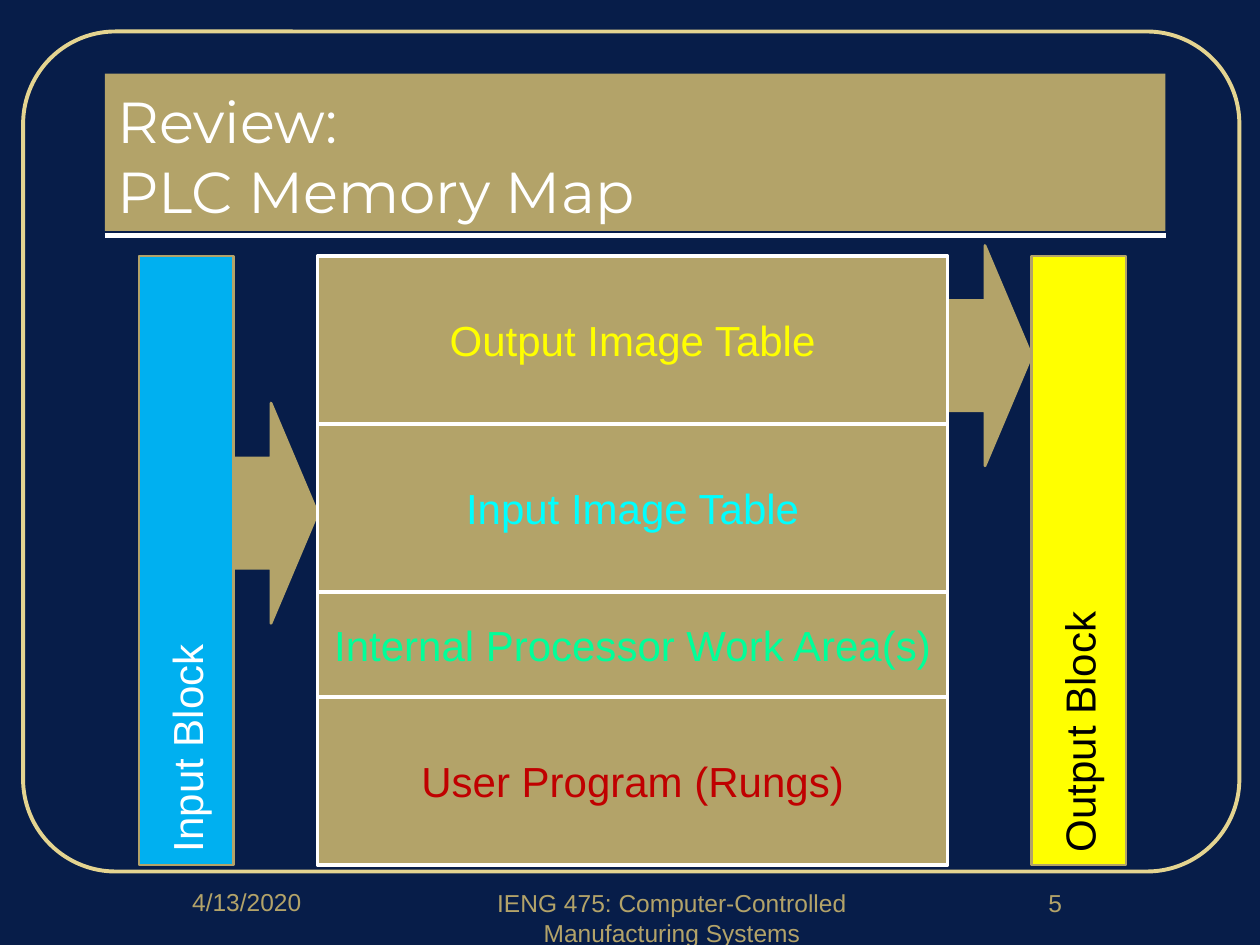
from lxml import etree
from pptx import Presentation
from pptx.dml.color import RGBColor
from pptx.enum.shapes import MSO_CONNECTOR, MSO_SHAPE
from pptx.enum.text import MSO_ANCHOR, PP_ALIGN
from pptx.oxml.ns import qn
from pptx.util import Pt

RECT, ROUNDED, ARROW = MSO_SHAPE.RECTANGLE, MSO_SHAPE.ROUNDED_RECTANGLE, MSO_SHAPE.RIGHT_ARROW
LEFT, CENTER = PP_ALIGN.LEFT, PP_ALIGN.CENTER
TOP, MIDDLE, BOTTOM = MSO_ANCHOR.TOP, MSO_ANCHOR.MIDDLE, MSO_ANCHOR.BOTTOM

NAVY, GOLD, CREAM, WHITE = "071D49", "B3A369", "E4D490", "FFFFFF"

# Content
TITLE = "Review:\vPLC Memory Map"
FOOTERS = [  # text, left, top, width
    ("4/13/2020", 60, 503.5, 162),
    ("IENG 475: Computer-Controlled Manufacturing Systems", 258, 504, 252),
    ("5", 540, 504, 126),
]
MEMORY_AREAS = [  # text, height, text colour
    ("Output Image Table", 96, "FFFF00"),
    ("Input Image Table", 96, "00FFFF"),
    ("Internal Processor Work Area(s)", 60, "00FF99"),
    ("User Program (Rungs)", 96, "C00000"),
]

# Layout
MAP_LEFT, MAP_TOP, MAP_WIDTH = 181.5, 146.25, 360
MAP_RIGHT = MAP_LEFT + MAP_WIDTH
MAP_HEIGHT = sum(height for _, height, _ in MEMORY_AREAS)
BLOCK_WIDTH, ARROW_WIDTH, ARROW_HEIGHT = 54, 48, 126
BLOCKS = [  # text, left, fill, text colour
    ("Input Block", MAP_LEFT - ARROW_WIDTH - BLOCK_WIDTH, "00B0F0", WHITE),
    ("Output Block", MAP_RIGHT + ARROW_WIDTH, "FFFF00", "000000"),
]
ARROWS = [(MAP_LEFT - ARROW_WIDTH, 230.25), (MAP_RIGHT, 140.25)]  # left, top


def color(value):
    return RGBColor.from_string(value)


def add_shape(page, kind, left, top, width, height, fill=None, line=None, weight=1.5):
    shape = page.shapes.add_shape(kind, Pt(left), Pt(top), Pt(width), Pt(height))
    shape.shadow.inherit = False
    if fill:
        shape.fill.solid()
        shape.fill.fore_color.rgb = color(fill)
    else:
        shape.fill.background()
    if line:
        shape.line.color.rgb = color(line)
        shape.line.width = Pt(weight)
    else:
        shape.line.fill.background()
    return shape


def write(shape, text, size, text_color, font="Arial", align=CENTER, anchor=MIDDLE, wrap=True):
    frame = shape.text_frame
    frame.word_wrap = wrap
    frame.vertical_anchor = anchor
    para = frame.paragraphs[0]
    para.text = text
    para.alignment = align
    para.font.size = Pt(size)
    para.font.name = font
    para.font.color.rgb = color(text_color)
    return frame


def main():
    deck = Presentation()
    deck.slide_width, deck.slide_height = Pt(720), Pt(540)
    page = deck.slides.add_slide(deck.slide_layouts[6])
    page.background.fill.solid()
    page.background.fill.fore_color.rgb = color(NAVY)

    # Frame and title rule
    border = add_shape(page, ROUNDED, 13.25, 18, 695, 480, line=CREAM, weight=2.25)
    border.adjustments[0] = 0.11
    rule = page.shapes.add_connector(MSO_CONNECTOR.STRAIGHT, Pt(60), Pt(134.5), Pt(666), Pt(134.5))
    rule.line.color.rgb = color(WHITE)
    rule.line.width = Pt(3)
    etree.SubElement(rule._element.spPr, qn("a:effectLst"))

    # Footers
    for text, left, top, width in FOOTERS:
        box = page.shapes.add_textbox(Pt(left), Pt(top), Pt(width), Pt(36))
        write(box, text, 14, GOLD, anchor=TOP)

    # Title
    banner = add_shape(page, RECT, 60, 42, 606, 90, fill=GOLD)
    write(banner, TITLE, 33, WHITE, "Montserrat", LEFT, BOTTOM)

    # Input and output blocks, read upwards
    for text, left, fill, text_color in BLOCKS:
        block = add_shape(page, RECT, left, MAP_TOP, BLOCK_WIDTH, MAP_HEIGHT, fill, GOLD)
        frame = write(block, text, 24, text_color, align=LEFT)
        frame.margin_bottom = frame.margin_top = Pt(7.2)
        frame._txBody.bodyPr.set("vert", "vert270")

    # Data flow arrows
    for left, top in ARROWS:
        arrow = add_shape(page, ARROW, left, top, ARROW_WIDTH, ARROW_HEIGHT, GOLD, GOLD)
        arrow.adjustments[1] = 0.555

    # Memory map
    top = MAP_TOP
    for text, height, text_color in MEMORY_AREAS:
        area = add_shape(page, RECT, MAP_LEFT, top, MAP_WIDTH, height, GOLD, WHITE, 2)
        write(area, text, 24, text_color, wrap=False)
        top += height

    deck.save("out.pptx")


if __name__ == "__main__":
    main()
